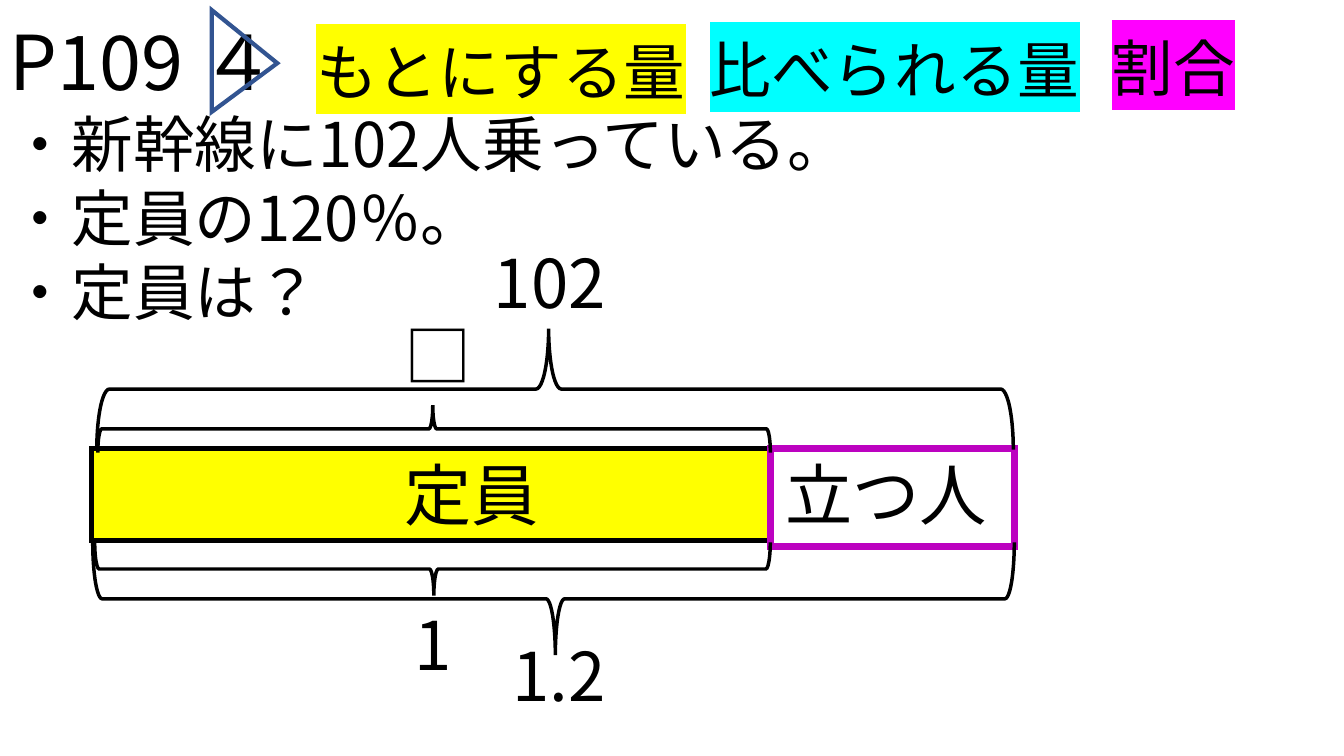
from lxml.etree import SubElement
from pptx import Presentation
from pptx.dml.color import RGBColor
from pptx.enum.lang import MSO_LANGUAGE_ID
from pptx.enum.shapes import MSO_SHAPE
from pptx.enum.text import MSO_ANCHOR, PP_ALIGN
from pptx.oxml.ns import qn
from pptx.util import Inches, Pt

FONT = "Noto Sans CJK JP"
BLACK, WHITE, YELLOW = "000000", "FFFFFF", "FFFF00"
CYAN, MAGENTA, PURPLE, BLUE = "00FFFF", "FF00FF", "BC02C0", "325491"
LABEL_HEIGHT = 0.91


def color(value):
    return RGBColor.from_string(value)


def add_paragraph(frame, text, size=48, highlight=None, first=True):
    paragraph = frame.paragraphs[0] if first else frame.add_paragraph()
    paragraph.alignment = PP_ALIGN.LEFT
    run = paragraph.add_run()
    run.text = text
    run.font.size = Pt(size)
    run.font.language_id = MSO_LANGUAGE_ID.JAPANESE
    run.font.color.rgb = color(BLACK)
    properties = run.font._element
    if highlight:
        mark = SubElement(properties, qn("a:highlight"))
        SubElement(mark, qn("a:srgbClr"), val=highlight)
    run.font.name = FONT
    SubElement(properties, qn("a:ea"), typeface=FONT)


def add_text(slide, box, text, **text_format):
    shape = slide.shapes.add_textbox(*map(Inches, box))
    shape.text_frame.word_wrap = True
    shape.text_frame.vertical_anchor = MSO_ANCHOR.TOP
    add_paragraph(shape.text_frame, text, **text_format)
    return shape


def add_outline(slide, kind, box, line, width, fill=None, adjustments=()):
    shape = slide.shapes.add_shape(kind, *map(Inches, box))
    shape.shadow.inherit = False
    if fill:
        shape.fill.solid()
        shape.fill.fore_color.rgb = color(fill)
    else:
        shape.fill.background()
    shape.line.color.rgb = color(line)
    shape.line.width = Pt(width)
    # Sharp corners
    SubElement(shape._element.spPr.find(qn("a:ln")), qn("a:miter"), lim="800000")
    for index, value in enumerate(adjustments):
        shape.adjustments[index] = value
    return shape


def add_turned(slide, kind, box, rotation, **style):
    """Place a quarter-turned shape so that it fills the given box."""
    left, top, width, height = box
    shift = (width - height) / 2
    frame = (left + shift, top - shift, height, width)
    add_outline(slide, kind, frame, **style).rotation = rotation


def add_problem(slide, box):
    problem = add_text(slide, box, "P109 ４", size=54)
    for line in ("・新幹線に102人乗っている。", "・定員の120％。", "・定員は？"):
        add_paragraph(problem.text_frame, line, size=44, first=False)


def add_terms(slide, box):
    left, top, width, height = box
    terms = [
        ("もとにする量", 0, 0.04, 4.49, YELLOW, WHITE),
        ("比べられる量", 3.9, 0.02, 4.33, CYAN, WHITE),
        ("割合", 7.89, 0, 1.43, MAGENTA, None),
    ]
    for text, across, down, term_width, highlight, fill in terms:
        term_box = (left + across, top + down, term_width, height)
        term = add_text(slide, term_box, text, size=44, highlight=highlight)
        if fill:
            term.fill.solid()
            term.fill.fore_color.rgb = color(fill)


def add_diagram(slide, box):
    left, top, width, height = box
    # Bars for the seats and the standing passengers
    add_outline(slide, MSO_SHAPE.RECTANGLE, (left, top, 6.72, height),
                BLACK, 3.75, fill=YELLOW)
    add_outline(slide, MSO_SHAPE.RECTANGLE, (left + 6.73, top, 2.42, 0.97),
                PURPLE, 4.75)

    # Braces: offset, width, depth, rotation, adjustments
    braces = [
        (0.03, 0.93, 6.7, 0.53, 270, (0.083, 0.502)),
        (0.01, 0.93, 9.14, 1.12, 270, (0.083, 0.502)),
        (0.05, -1.19, 9.09, 1.2, 90, (0.105, 0.507)),
        (0.06, -0.43, 6.67, 0.47, 90, (0.083, 0.502)),
    ]
    for across, down, span, depth, rotation, adjustments in braces:
        add_turned(slide, MSO_SHAPE.LEFT_BRACE,
                   (left + across, top + down, span, depth), rotation,
                   line=BLACK, width=2.5, adjustments=adjustments)

    # Labels: text, offset, width
    labels = [
        ("1.2", 4.07, 1.79, 1.61),
        ("1", 3.1, 1.49, 0.79),
        ("定員", 3, 0, 2.07),
        ("□", 3, -1.38, 1.34),
        ("102", 3.89, -2.11, 1.61),
        ("立つ人", 6.78, 0, 2.42),
    ]
    for text, across, down, label_width in labels:
        add_text(slide, (left + across, top + down, label_width, LABEL_HEIGHT), text)


def main():
    presentation = Presentation()
    presentation.slide_width = Inches(13.33)
    presentation.slide_height = Inches(7.5)
    slide = presentation.slides.add_slide(presentation.slide_layouts[6])
    add_problem(slide, (0, 0.1, 13.33, 3.23))
    add_terms(slide, (3.04, 0.25, 9.32, 0.84))
    # Triangle around the problem number
    add_turned(slide, MSO_SHAPE.ISOSCELES_TRIANGLE, (2.1, 0.1, 0.65, 1.01), 90,
               line=BLUE, width=3, adjustments=(0.522,))
    add_diagram(slide, (0.91, 4.45, 9.15, 0.91))
    presentation.save("out.pptx")


if __name__ == "__main__":
    main()
